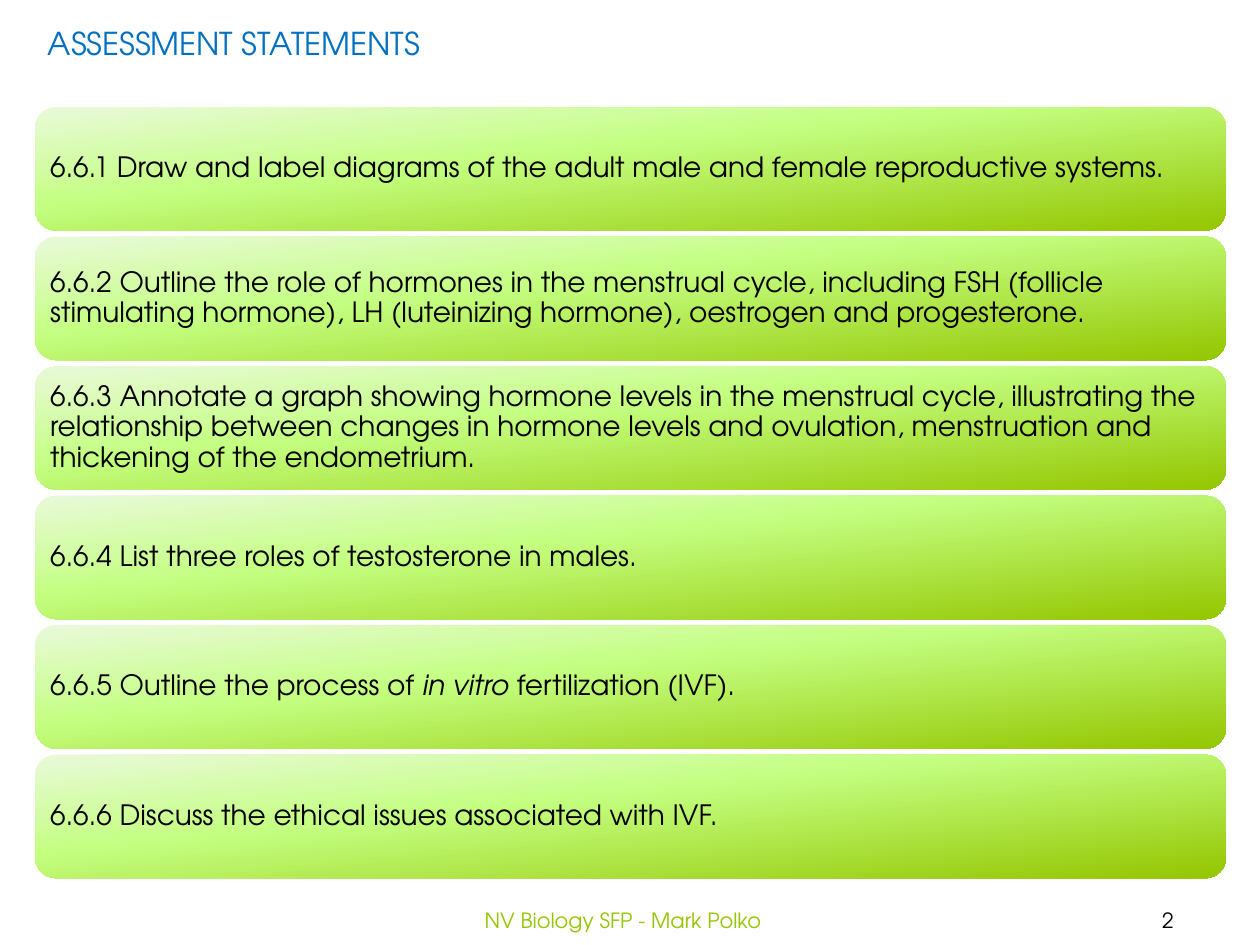
from copy import deepcopy
from dataclasses import dataclass

from pptx import Presentation
from pptx.dml.color import RGBColor
from pptx.enum.shapes import MSO_SHAPE
from pptx.enum.text import MSO_ANCHOR, PP_ALIGN
from pptx.oxml.ns import qn
from pptx.util import Inches, Pt


@dataclass(frozen=True)
class Theme:
    font: str = "TeX Gyre Adventor"
    title_color: str = "0070C0"
    text_color: str = "000000"
    footer_color: str = "94C600"
    gradient: tuple = ((0, "EAF9DA"), (0.4, "C4FF82"), (1, "94C600"))
    gradient_angle: int = 276
    title_size: int = 18
    body_size: int = 16
    footer_size: int = 12


THEME = Theme()

BAR_LEFT, BAR_WIDTH, BAR_HEIGHT = 0.28, 9.45, 0.98
FIRST_BAR_TOP, LAST_BAR_TOP = 0.85, 5.99

# Each statement is a list of (text, italic) runs.
STATEMENTS = [
    [("6.6.1 Draw and label diagrams of the adult male and female "
      "reproductive systems.", False)],
    [("6.6.2 Outline the role of hormones in the menstrual cycle, including "
      "FSH (follicle stimulating hormone), LH (luteinizing hormone), "
      "oestrogen and progesterone.", False)],
    [("6.6.3 Annotate a graph showing hormone levels in the menstrual cycle, "
      "illustrating the relationship between changes in hormone levels and "
      "ovulation, menstruation and thickening of the endometrium.", False)],
    [("6.6.4 List three roles of testosterone in males.", False)],
    [("6.6.5 Outline the process of ", False), ("in vitro ", True),
     ("fertilization (IVF).", False)],
    [("6.6.6 Discuss the ethical issues associated with IVF.", False)],
]


def style_paragraph(paragraph, size, color, alignment=PP_ALIGN.LEFT):
    paragraph.alignment = alignment
    paragraph.font.name = THEME.font
    paragraph.font.size = Pt(size)
    paragraph.font.color.rgb = RGBColor.from_string(color)


def set_title(slide, text):
    title = slide.shapes.title
    title.left, title.top = Inches(0.28), Inches(0.14)
    title.width, title.height = Inches(3.21), Inches(0.71)
    frame = title.text_frame
    frame.text = text
    frame.word_wrap = False
    frame.vertical_anchor = MSO_ANCHOR.TOP
    style_paragraph(frame.paragraphs[0], THEME.title_size, THEME.title_color)


def fill_with_gradient(shape):
    """Fill the shape with the theme gradient, which has three stops."""
    shape.fill.gradient()
    shape.fill.gradient_angle = THEME.gradient_angle
    stop_list = shape.element.find(".//" + qn("a:gsLst"))
    stop_list.append(deepcopy(stop_list[-1]))
    for stop, (position, color) in zip(shape.fill.gradient_stops, THEME.gradient):
        stop.position = position
        stop.color.rgb = RGBColor.from_string(color)


def add_statement_bar(slide, top, runs):
    bar = slide.shapes.add_shape(
        MSO_SHAPE.ROUNDED_RECTANGLE, Inches(BAR_LEFT), Inches(top),
        Inches(BAR_WIDTH), Inches(BAR_HEIGHT))
    bar.shadow.inherit = False
    bar.line.fill.background()
    fill_with_gradient(bar)

    frame = bar.text_frame
    frame.word_wrap = True
    frame.vertical_anchor = MSO_ANCHOR.MIDDLE
    frame.margin_left = frame.margin_right = Inches(0.07)
    frame.margin_top = frame.margin_bottom = Inches(0.07)
    paragraph = frame.paragraphs[0]
    paragraph.line_spacing = 0.9
    style_paragraph(paragraph, THEME.body_size, THEME.text_color)
    for text, italic in runs:
        run = paragraph.add_run()
        run.text = text
        if italic:
            run.font.italic = True


def add_footer(slide, left, width, text, color):
    box = slide.shapes.add_textbox(
        Inches(left), Inches(7.1), Inches(width), Inches(0.4))
    frame = box.text_frame
    frame.word_wrap = True
    frame.vertical_anchor = MSO_ANCHOR.MIDDLE
    frame.text = text
    style_paragraph(frame.paragraphs[0], THEME.footer_size, color, PP_ALIGN.CENTER)


def main():
    presentation = Presentation()
    presentation.slide_width = Inches(10)
    presentation.slide_height = Inches(7.5)
    title_only = presentation.slide_layouts.get_by_name("Title Only")
    slide = presentation.slides.add_slide(title_only)

    set_title(slide, "ASSESSMENT STATEMENTS")
    pitch = (LAST_BAR_TOP - FIRST_BAR_TOP) / (len(STATEMENTS) - 1)
    for index, runs in enumerate(STATEMENTS):
        add_statement_bar(slide, FIRST_BAR_TOP + index * pitch, runs)
    add_footer(slide, 3.03, 3.83, "NV Biology SFP - Mark Polko", THEME.footer_color)
    add_footer(slide, 8.54, 1.46, "2", THEME.text_color)

    presentation.save("out.pptx")


if __name__ == "__main__":
    main()
